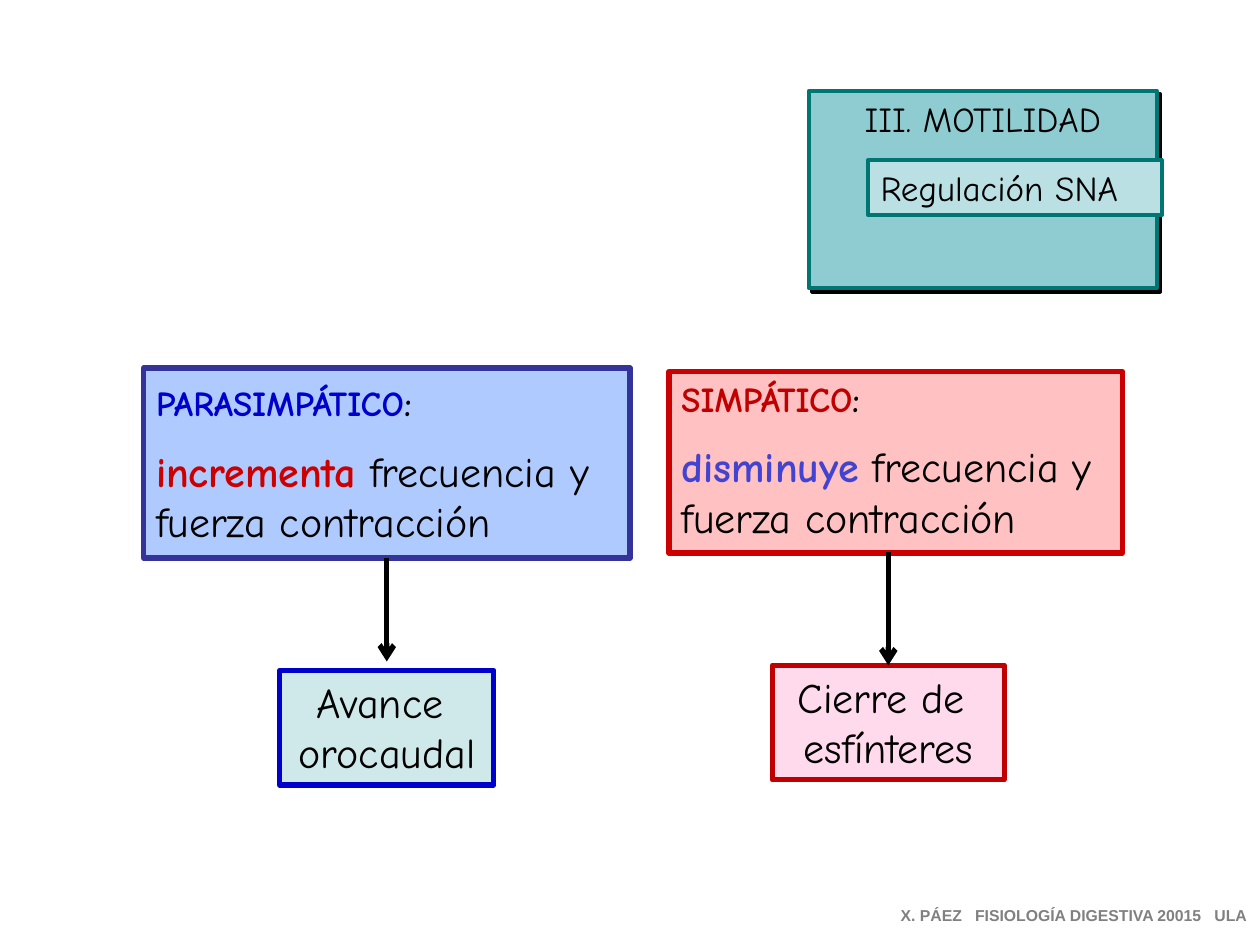
from dataclasses import dataclass

from lxml.etree import SubElement
from pptx import Presentation
from pptx.dml.color import RGBColor
from pptx.enum.shapes import MSO_CONNECTOR, MSO_SHAPE
from pptx.enum.text import MSO_ANCHOR, MSO_AUTO_SIZE, PP_ALIGN
from pptx.oxml.ns import qn
from pptx.util import Inches, Pt


@dataclass(frozen=True)
class Theme:
    font: str = "Comic Neue"
    footer_font: str = "Arial"
    label: int = 20
    body: int = 24
    footer: int = 9
    black: str = "000000"
    grey: str = "808080"
    teal: str = "007673"
    teal_fill: str = "8FCCD1"
    teal_light: str = "BBE0E3"
    teal_pale: str = "CFE9EB"
    blue: str = "0000CC"
    blue_soft: str = "4343D1"
    navy: str = "333399"
    blue_fill: str = "AFCAFF"
    red: str = "CC0000"
    red_dark: str = "C00000"
    red_fill: str = "FFC1C1"
    pink_fill: str = "FFD9EC"


THEME = Theme()


def color(value):
    return RGBColor.from_string(value)


def add_span(para, text, size, text_color=THEME.black, bold=False, font=THEME.font):
    span = para.add_run()
    span.text = text
    formats = {"name": font, "size": Pt(size), "bold": bold}
    for name, value in formats.items():
        setattr(span.font, name, value)
    span.font.color.rgb = color(text_color)


def style_box(box, place, fill, line, line_width):
    for name, value in zip(("left", "top", "width", "height"), place):
        setattr(box, name, Inches(value))
    box.fill.solid()
    box.fill.fore_color.rgb = color(fill)
    box.line.color.rgb = color(line)
    box.line.width = Pt(line_width)
    box.shadow.inherit = False


def fill_text(box, paragraphs, align=PP_ALIGN.LEFT, wrap=True, gap=0):
    """Write paragraphs, each a list of add_span arguments, with a gap in points between."""
    frame = box.text_frame
    formats = {
        "word_wrap": wrap,
        "auto_size": MSO_AUTO_SIZE.SHAPE_TO_FIT_TEXT,
        "vertical_anchor": MSO_ANCHOR.TOP,
    }
    for name, value in formats.items():
        setattr(frame, name, value)
    for index, spans in enumerate(paragraphs):
        para = frame.add_paragraph() if index else frame.paragraphs[0]
        para.alignment = align
        if index and gap:
            para.space_before = Pt(gap)
        for span in spans:
            add_span(para, *span)


def add_box(page, place, fill, line, paragraphs, line_width=3, **text_format):
    box = page.shapes.add_shape(MSO_SHAPE.RECTANGLE, *map(Inches, place))
    style_box(box, place, fill, line, line_width)
    fill_text(box, paragraphs, **text_format)
    return box


def add_hard_shadow(box):
    effects = box._element.spPr.find(qn("a:effectLst"))
    shadow = SubElement(effects, qn("a:outerShdw"), dist=str(Pt(2.8)),
                        dir="2700000", algn="ctr", rotWithShape="0")
    SubElement(shadow, qn("a:srgbClr"), val=THEME.black)


def add_heading(page):
    title = page.shapes.title
    style_box(title, (6.42, 0.72, 2.76, 0.44), THEME.teal_fill, THEME.teal, 2.25)
    add_hard_shadow(title)
    fill_text(title, [[("III. MOTILIDAD", THEME.label)]], align=PP_ALIGN.CENTER)
    add_box(page, (6.89, 1.27, 2.33, 0.44), THEME.teal_light, THEME.teal,
            [[("Regulación SNA", THEME.label)]], line_width=2.25, wrap=False)


def add_system(page, place, fill, line, name_spans, verb, verb_color):
    """Add the box that tells what one nervous system does to motility."""
    action = [(verb, THEME.body, verb_color, True),
              (" frecuencia y fuerza contracción", THEME.body)]
    return add_box(page, place, fill, line, [name_spans, action], gap=12)


def add_effect(page, place, fill, line, lines):
    return add_box(page, place, fill, line, [[(text, THEME.body)] for text in lines],
                   align=PP_ALIGN.CENTER, wrap=False)


def add_arrow(page, start, end):
    arrow = page.shapes.add_connector(MSO_CONNECTOR.STRAIGHT, *map(Inches, start + end))
    arrow.line.color.rgb = color(THEME.black)
    arrow.line.width = Pt(3)
    SubElement(arrow.line._get_or_add_ln(), qn("a:tailEnd"), type="arrow")
    SubElement(arrow._element.spPr, qn("a:effectLst"))
    return arrow


def add_footer(page):
    box = page.shapes.add_textbox(*map(Inches, (7.05, 7.14, 2.95, 0.25)))
    para = box.text_frame.paragraphs[0]
    tabs = SubElement(para._p.get_or_add_pPr(), qn("a:tabLst"))
    for position in (0.59, 2.49):
        SubElement(tabs, qn("a:tab"), pos=str(Inches(position)), algn="l")
    text = "X. PÁEZ\tFISIOLOGÍA DIGESTIVA 20015\tULA"
    fill_text(box, [[(text, THEME.footer, THEME.grey, True, THEME.footer_font)]])


def main():
    deck = Presentation()
    deck.slide_width, deck.slide_height = Inches(10), Inches(7.5)
    page = deck.slides.add_slide(deck.slide_layouts[5])

    add_heading(page)
    parasympathetic = add_system(
        page, (1.14, 2.92, 3.86, 1.51), THEME.blue_fill, THEME.navy,
        [("PARASIMPÁTICO", THEME.label, THEME.blue, True),
         (":", THEME.label, THEME.black, True), (" ", THEME.body)],
        "incrementa", THEME.red)
    add_system(
        page, (5.31, 2.95, 3.6, 1.44), THEME.red_fill, THEME.red,
        [("SIMPÁTICO", THEME.label, THEME.red_dark, True),
         (":", THEME.label, THEME.black, True)],
        "disminuye", THEME.blue_soft)
    add_effect(page, (2.22, 5.32, 1.7, 0.91), THEME.teal_pale, THEME.blue,
               ("Avance ", "orocaudal"))
    closure = add_effect(page, (6.13, 5.28, 1.84, 0.91), THEME.pink_fill, THEME.red_dark,
                         ("Cierre de ", "esfínteres"))

    add_arrow(page, (3.07, 4.43), (3.07, 5.25)).begin_connect(parasympathetic, 2)
    add_arrow(page, (7.05, 4.38), (7.05, 5.28)).end_connect(closure, 0)
    add_footer(page)
    deck.save("out.pptx")


if __name__ == "__main__":
    main()
